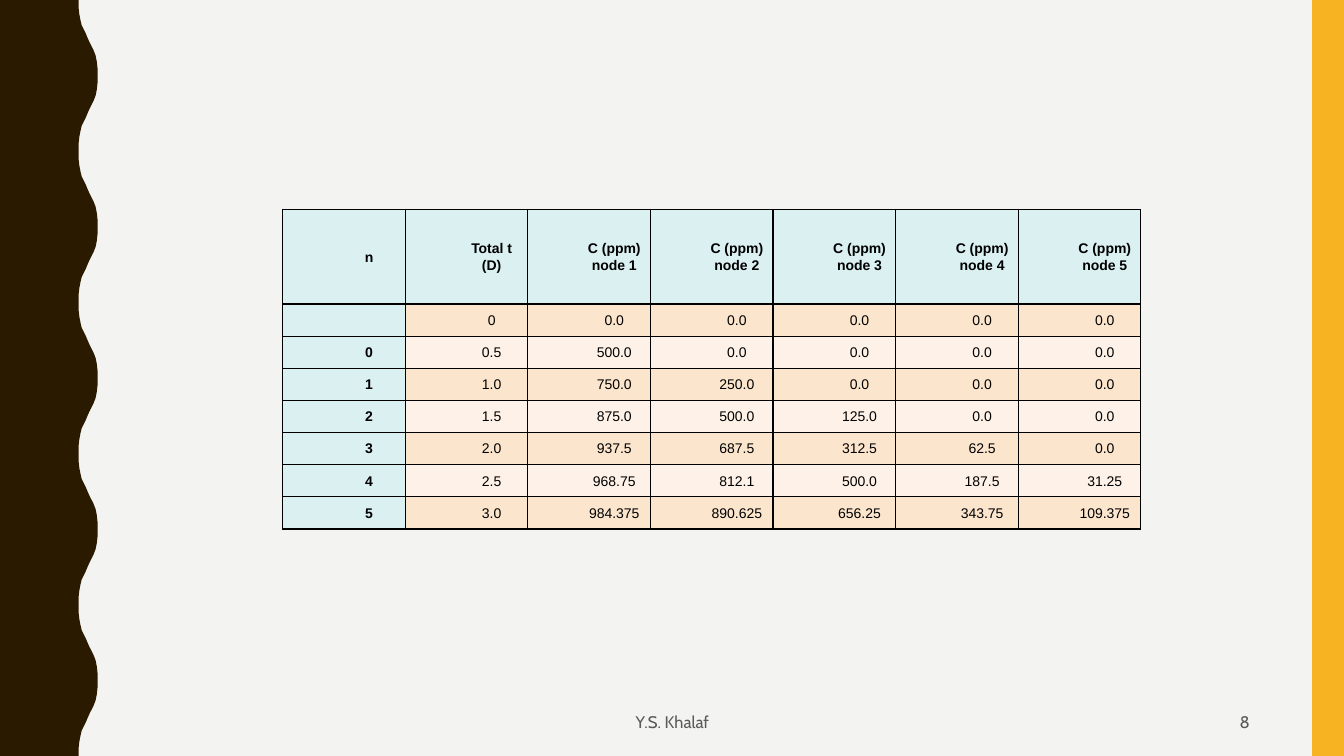
from lxml import etree
from pptx import Presentation
from pptx.dml.color import RGBColor
from pptx.enum.shapes import MSO_SHAPE
from pptx.enum.text import MSO_ANCHOR, PP_ALIGN
from pptx.oxml.ns import qn
from pptx.util import Cm, Pt

RECTANGLE = MSO_SHAPE.RECTANGLE
MIDDLE = MSO_ANCHOR.MIDDLE
CENTER, RIGHT = PP_ALIGN.CENTER, PP_ALIGN.RIGHT

PAGE_WIDTH, PAGE_HEIGHT = 33.87, 19.05
WAVE_COUNT = 5
WAVE_PERIOD = PAGE_HEIGHT / WAVE_COUNT
HALF_WAVE = [
    (1.98, 0), (1.98, 0.18), (2, 0.36), (2.03, 0.51), (2.06, 0.64),
    (2.11, 0.74), (2.16, 0.84), (2.21, 0.96), (2.26, 1.07), (2.31, 1.17),
    (2.36, 1.27), (2.41, 1.4), (2.44, 1.55), (2.46, 1.73), (2.46, 1.9),
]
HEADERS = ["n", "Total t\n(D)"] + [f"C (ppm) node {node}" for node in range(1, 6)]
CONCENTRATIONS = [
    ["", "0", "0.0", "0.0", "0.0", "0.0", "0.0"],
    ["0", "0.5", "500.0", "0.0", "0.0", "0.0", "0.0"],
    ["1", "1.0", "750.0", "250.0", "0.0", "0.0", "0.0"],
    ["2", "1.5", "875.0", "500.0", "125.0", "0.0", "0.0"],
    ["3", "2.0", "937.5", "687.5", "312.5", "62.5", "0.0"],
    ["4", "2.5", "968.75", "812.1", "500.0", "187.5", "31.25"],
    ["5", "3.0", "984.375", "890.625", "656.25", "343.75", "109.375"],
]


def color(value):
    return RGBColor.from_string(value)


class SlideBuilder:
    background = "F3F3F2"
    wave_fill = "2A1A00"
    bar_fill = "F8B323"
    footer_font, footer_size, footer_color = "Cabin", 12, "595959"
    table_font, table_size, table_color = "Arial", 10, "000000"
    label_fill = "DAF0F1"
    band_fills = ("FCE5CD", "FEF2E8")

    def __init__(self, page):
        self.page = page
        page.background.fill.solid()
        page.background.fill.fore_color.rgb = color(self.background)

    def paint(self, shape, fill):
        shape.shadow.inherit = False
        shape.fill.solid()
        shape.fill.fore_color.rgb = color(fill)
        shape.line.fill.background()

    def wave(self):
        falling = [(x, WAVE_PERIOD - y) for x, y in reversed(HALF_WAVE)]
        edge = [
            (Cm(x), Cm(y + index * WAVE_PERIOD))
            for index in range(WAVE_COUNT)
            for x, y in HALF_WAVE + falling
        ]
        builder = self.page.shapes.build_freeform(0, 0)
        builder.add_line_segments(edge + [(0, Cm(PAGE_HEIGHT))], close=True)
        self.paint(builder.convert_to_shape(), self.wave_fill)

    def bar(self, left, width):
        shape = self.page.shapes.add_shape(
            RECTANGLE, Cm(left), 0, Cm(width), Cm(PAGE_HEIGHT))
        self.paint(shape, self.bar_fill)

    def style_spans(self, para, font, size, ink, bold=False):
        for span in para.runs:
            span.font.name = font
            span.font.size = Pt(size)
            span.font.bold = bold
            span.font.color.rgb = color(ink)

    def footer(self, text, left, width, alignment):
        box = self.page.shapes.add_textbox(Cm(left), Cm(17.7), Cm(width), Cm(0.97))
        frame = box.text_frame
        frame.word_wrap = True
        frame.vertical_anchor = MIDDLE
        frame.text = text
        para = frame.paragraphs[0]
        para.alignment = alignment
        self.style_spans(para, self.footer_font, self.footer_size, self.footer_color)

    def border(self, cell):
        properties = cell._tc.get_or_add_tcPr()
        for side in ("a:lnL", "a:lnR", "a:lnT", "a:lnB"):
            line = etree.SubElement(properties, qn(side), w=str(Pt(1)))
            fill = etree.SubElement(line, qn("a:solidFill"))
            etree.SubElement(fill, qn("a:srgbClr"), val=self.table_color)

    def cell(self, cell, text, fill, bold, space_after):
        self.border(cell)
        cell.fill.solid()
        cell.fill.fore_color.rgb = color(fill)
        cell.vertical_anchor = MIDDLE
        cell.margin_left = cell.margin_right = Cm(0.18)
        cell.margin_top = cell.margin_bottom = 0
        cell.text_frame.text = text
        for para in cell.text_frame.paragraphs:
            para.alignment = CENTER
            para.line_spacing = 1.07
            para.space_after = Pt(space_after)
            para.font.size = Pt(self.table_size)
            para._p.get_or_add_pPr().set("marL", str(Cm(1.27)))
            self.style_spans(
                para, self.table_font, self.table_size, self.table_color, bold)

    def table(self, rows, left, top, column_width, header_height, row_height):
        columns = len(rows[0])
        height = header_height + row_height * (len(rows) - 1)
        table = self.page.shapes.add_table(
            len(rows), columns, Cm(left), Cm(top),
            Cm(column_width * columns), Cm(height)).table
        table.first_row = table.horz_banding = False
        for column in table.columns:
            column.width = Cm(column_width)
        for row_index, values in enumerate(rows):
            is_header = row_index == 0
            table.rows[row_index].height = Cm(header_height if is_header else row_height)
            for column_index, text in enumerate(values):
                is_label = is_header or column_index == 0
                band = self.band_fills[(row_index - 1) % 2]
                self.cell(
                    table.cell(row_index, column_index), text,
                    self.label_fill if is_label else band, is_label,
                    8 if column_index == columns - 1 else 0)


def main():
    deck = Presentation()
    deck.slide_width, deck.slide_height = Cm(PAGE_WIDTH), Cm(PAGE_HEIGHT)
    builder = SlideBuilder(deck.slides.add_slide(deck.slide_layouts[6]))
    builder.wave()
    builder.bar(33.07, 0.8)
    builder.footer("Y.S. Khalaf", 11.23, 11.43, CENTER)
    builder.footer("8", 23.93, 7.82, RIGHT)
    builder.table([HEADERS] + CONCENTRATIONS, 7.12, 5.28, 3.09, 2.38, 0.81)
    deck.save("out.pptx")


if __name__ == "__main__":
    main()
